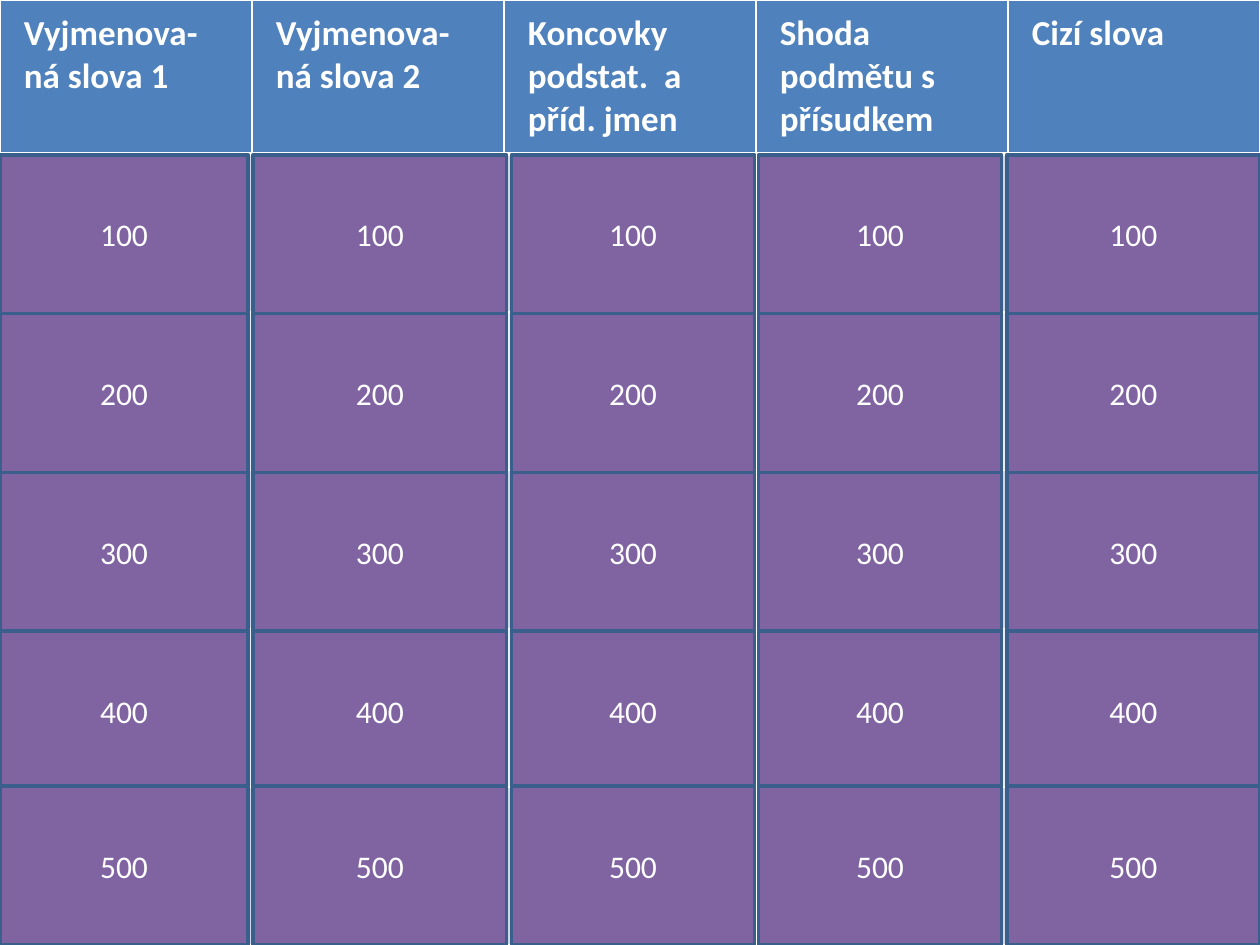
import dataclasses

import lxml.etree
import pptx
import pptx.dml.color
import pptx.enum.shapes
import pptx.enum.text
import pptx.oxml.ns
import pptx.util

Inches = pptx.util.Inches


@dataclasses.dataclass(frozen=True)
class Theme:
    font: str = "Calibri"
    heading_size: int = 20
    points_size: int = 18
    white: str = "FFFFFF"
    heading_fill: str = "4F81BD"
    band_fills: tuple = ("D0D8E8", "E9EDF4")
    button_fill: str = "8064A2"
    button_line: str = "3A5F8C"
    button_line_width: int = 2
    border_width: int = 1
    heading_border_width: int = 3


class QuizBoard:
    def __init__(self, slide, theme):
        self.slide = slide
        self.theme = theme

    def paint(self, fill, colour):
        fill.solid()
        fill.fore_color.rgb = pptx.dml.color.RGBColor.from_string(colour)

    def add_text(self, para, text, size, bold=False):
        span = para.add_run()
        span.text = text
        span.font.name = self.theme.font
        span.font.size = pptx.util.Pt(size)
        span.font.bold = bold
        self.paint(span.font.fill, self.theme.white)

    def border(self, cell, top_width, bottom_width):
        qn = pptx.oxml.ns.qn
        properties = cell._tc.get_or_add_tcPr()
        side = self.theme.border_width
        widths = {"L": side, "R": side, "T": top_width, "B": bottom_width}
        for index, (edge, width) in enumerate(widths.items()):
            line = lxml.etree.Element(qn(f"a:ln{edge}"), w=str(pptx.util.Pt(width)))
            fill = lxml.etree.SubElement(line, qn("a:solidFill"))
            lxml.etree.SubElement(fill, qn("a:srgbClr"), val=self.theme.white)
            properties.insert(index, line)

    def table(self, headings, row_count, width, height, heading_height):
        theme = self.theme
        frame = self.slide.shapes.add_table(
            row_count + 1, len(headings), 0, 0, width, height)
        grid = frame.table
        for column in grid.columns:
            column.width = int(width / len(headings))
        for index, row in enumerate(grid.rows):
            is_heading = index == 0
            row.height = heading_height if is_heading else int(
                (height - heading_height) / row_count)
            colour = theme.heading_fill if is_heading else theme.band_fills[(index - 1) % 2]
            top = theme.heading_border_width if index == 1 else theme.border_width
            bottom = theme.heading_border_width if is_heading else theme.border_width
            for cell in row.cells:
                self.paint(cell.fill, colour)
                self.border(cell, top, bottom)
        for cell, heading in zip(grid.rows[0].cells, headings):
            cell.margin_left = cell.margin_right = Inches(0.19)
            cell.margin_top = cell.margin_bottom = Inches(0.1)
            self.add_text(cell.text_frame.paragraphs[0], heading, theme.heading_size, True)

    def button(self, text, left, top, width, height):
        theme = self.theme
        box = self.slide.shapes.add_shape(
            pptx.enum.shapes.MSO_SHAPE.ACTION_BUTTON_CUSTOM, left, top, width, height)
        box.shadow.inherit = False
        self.paint(box.fill, theme.button_fill)
        self.paint(box.line.fill, theme.button_line)
        box.line.width = pptx.util.Pt(theme.button_line_width)
        box.text_frame.vertical_anchor = pptx.enum.text.MSO_ANCHOR.MIDDLE
        para = box.text_frame.paragraphs[0]
        para.alignment = pptx.enum.text.PP_ALIGN.CENTER
        self.add_text(para, text, theme.points_size)


def main():
    deck = pptx.Presentation()
    deck.slide_width = Inches(10)
    deck.slide_height = Inches(7.5)
    page = deck.slides.add_slide(deck.slide_layouts[6])
    board = QuizBoard(page, Theme())

    headings = [
        "Vyjmenova-ná slova 1",
        "Vyjmenova-ná slova 2",
        "Koncovky podstat.  a příd. jmen",
        "Shoda podmětu s přísudkem",
        "Cizí slova",
    ]
    button_columns = [(0, 1.97), (2.01, 2.01), (4.06, 1.93), (6.02, 1.93), (7.99, 2.01)]
    button_tops = {100: 1.23, 200: 2.49, 300: 3.75, 400: 5.01, 500: 6.24}

    board.table(headings, len(button_tops), deck.slide_width, deck.slide_height, Inches(1.22))
    for left, width in button_columns:
        for points, top in button_tops.items():
            board.button(str(points), Inches(left), Inches(top), Inches(width), Inches(1.26))

    deck.save("out.pptx")


if __name__ == "__main__":
    main()
